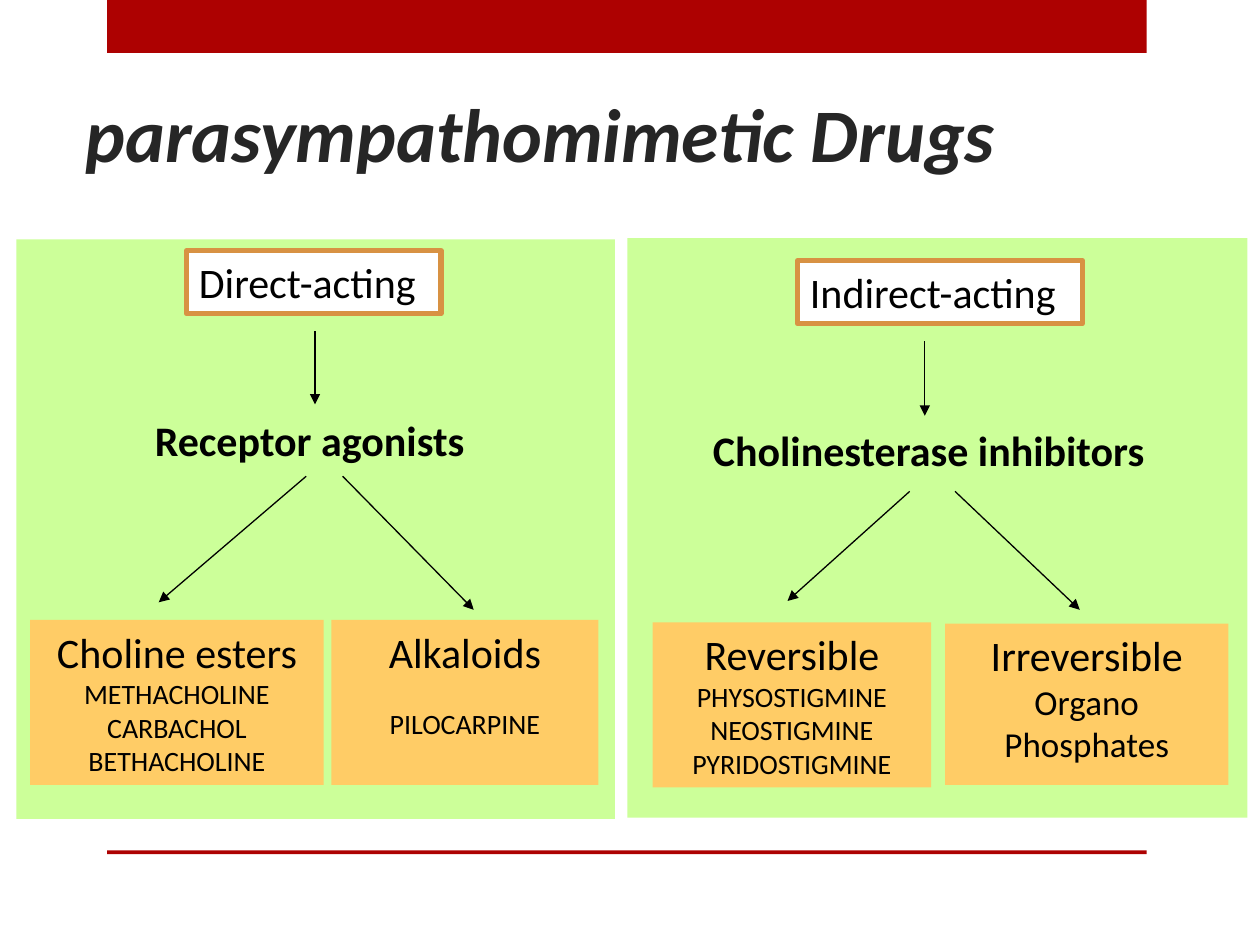
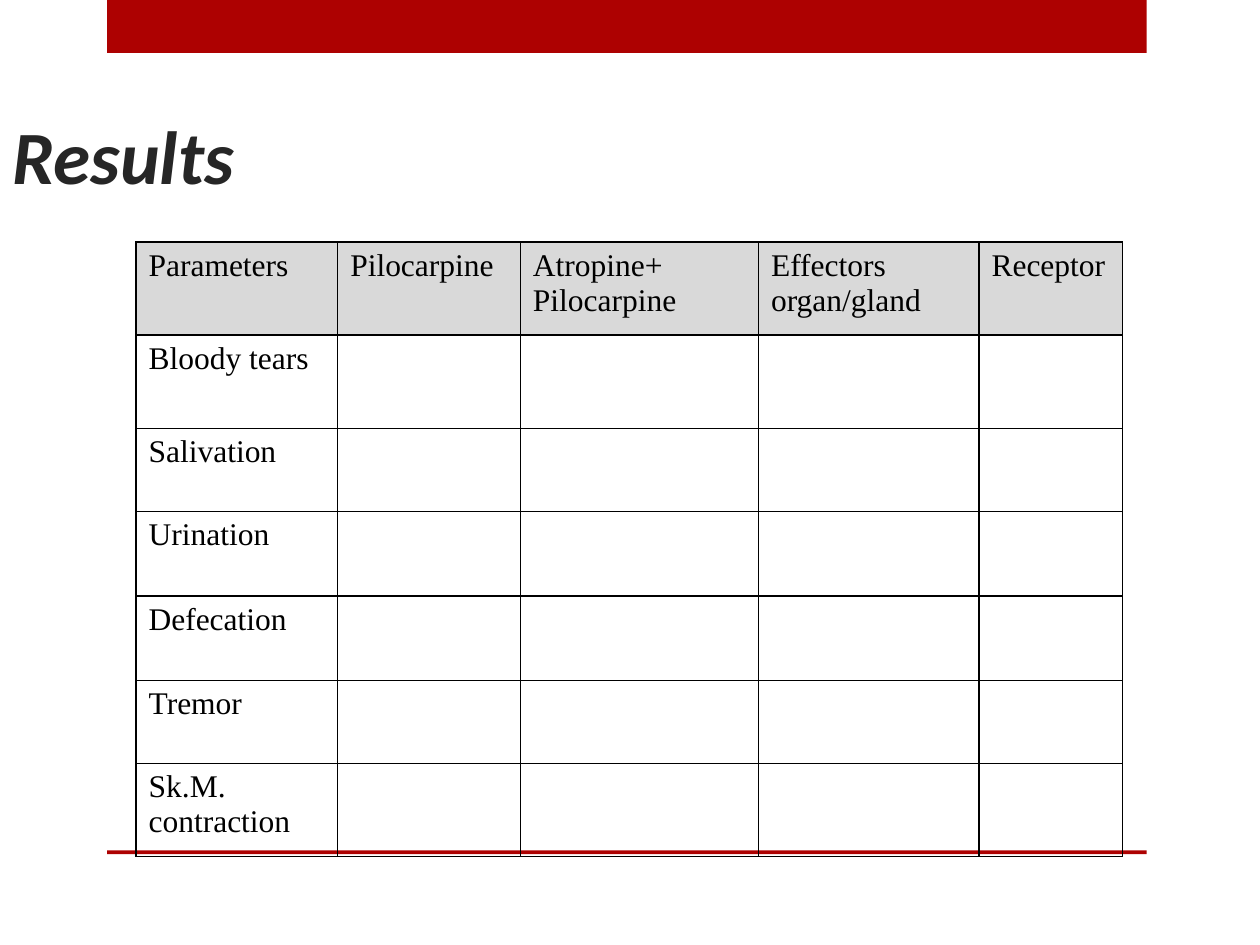
from dataclasses import dataclass
from typing import NamedTuple

from lxml.etree import SubElement
from pptx import Presentation
from pptx.dml.color import RGBColor
from pptx.enum.shapes import MSO_CONNECTOR, MSO_SHAPE
from pptx.enum.text import MSO_ANCHOR, PP_ALIGN
from pptx.oxml.ns import qn
from pptx.util import Inches, Pt

COLORS = {
    "band": "AD0101", "title": "262626", "ink": "000000", "paper": "FFFFFF",
    "panel": "CCFF99", "leaf": "FFCC66", "frame": "D89243", "header": "D9D9D9",
}
BODY_FONT, TABLE_FONT = "Calibri", "Times New Roman"
SLIDE_W, SLIDE_H = Inches(10), Inches(7.5)
GRID_COLUMNS, GRID_ROWS = 100, 75


class Area(NamedTuple):
    """A rectangle in grid columns and rows."""
    col: float
    row: float
    cols: float
    rows: float


class Arrow(NamedTuple):
    start_col: float
    start_row: float
    end_col: float
    end_row: float


class Line(NamedTuple):
    text: str
    size: float
    space_before: float = 0


@dataclass(frozen=True)
class DrugGroup:
    area: Area
    lines: tuple[Line, ...]


@dataclass(frozen=True)
class Branch:
    """One way of acting, its mechanism and the drug groups below it."""
    area: Area
    action: str
    action_area: Area
    mechanism: str
    mechanism_area: Area
    groups: tuple[DrugGroup, ...]
    arrows: tuple[Arrow, ...]


def drug_lines(heading: str, drugs: tuple[str, ...], size: float = 16,
               gap: float = 0) -> tuple[Line, ...]:
    first, *others = drugs
    return (Line(heading, 24), Line(first, size, gap),
            *(Line(drug, size) for drug in others))


BANDS = (Area(8.5, 0, 82.5, 4.2), Area(8.5, 67.5, 82.5, 0.3))

BRANCHES = (
    Branch(
        Area(49.8, 18.9, 49.2, 46),
        "Indirect-acting", Area(63.3, 20.7, 22.6, 5),
        "Cholinesterase inhibitors", Area(55.6, 33.2, 38.6, 5),
        (DrugGroup(Area(51.8, 49.4, 22.1, 13.1), drug_lines(
            "Reversible", ("PHYSOSTIGMINE", "NEOSTIGMINE", "PYRIDOSTIGMINE"))),
         DrugGroup(Area(75, 49.5, 22.5, 12.8), drug_lines(
             "Irreversible", ("Organo Phosphates",), size=20))),
        (Arrow(73.4, 27.1, 73.4, 33), Arrow(72.2, 39, 62.5, 47.7),
         Arrow(75.8, 39, 85.7, 48.4)),
    ),
    Branch(
        Area(1.3, 19, 47.5, 46),
        "Direct-acting", Area(14.8, 19.9, 20.2, 5),
        "Receptor agonists", Area(11.3, 32.4, 28.9, 5),
        (DrugGroup(Area(2.4, 49.2, 23.3, 13.1), drug_lines(
            "Choline esters", ("METHACHOLINE", "CARBACHOL", "BETHACHOLINE"))),
         DrugGroup(Area(26.3, 49.2, 21.2, 13.1), drug_lines(
             "Alkaloids", ("PILOCARPINE",), gap=17))),
        (Arrow(25, 26.3, 25, 32.1), Arrow(24.3, 37.8, 12.6, 47.8),
         Arrow(27.2, 37.8, 37.6, 48.4)),
    ),
)

RESULTS_AREA = Area(10.8, 19.2, 78.3, 48.8)
RESULTS_COLUMNS = (
    ("Parameters", 16), ("Pilocarpine", 14.5), ("Atropine+ Pilocarpine", 18.9),
    ("Effectors organ/gland", 17.5), ("Receptor", 11.4),
)
HEADER_ROWS = 7.4
RESULTS_PARAMETERS = (
    ("Bloody tears", 7.4), ("Salivation", 6.6), ("Urination", 6.7),
    ("Defecation", 6.7), ("Tremor", 6.6), ("Sk.M. contraction", 7.4),
)


def across(cols: float) -> int:
    return round(SLIDE_W * cols / GRID_COLUMNS)


def down(rows: float) -> int:
    return round(SLIDE_H * rows / GRID_ROWS)


def place(area: Area) -> tuple[int, int, int, int]:
    return across(area.col), down(area.row), across(area.cols), down(area.rows)


def color(name: str) -> RGBColor:
    return RGBColor.from_string(COLORS[name])


def style(font, size: float, ink: str = "ink", face: str = BODY_FONT,
          bold: bool = False, italic: bool = False) -> None:
    font.name, font.size, font.bold, font.italic = face, Pt(size), bold, italic
    font.color.rgb = color(ink)


def add_rectangle(slide, area: Area, fill: str, frame: str | None = None):
    rectangle = slide.shapes.add_shape(MSO_SHAPE.RECTANGLE, *place(area))
    rectangle.shadow.inherit = False
    rectangle.fill.solid()
    rectangle.fill.fore_color.rgb = color(fill)
    if frame:
        rectangle.line.color.rgb = color(frame)
        rectangle.line.width = Pt(3)
    else:
        rectangle.line.fill.background()
    return rectangle


def write_label(holder, text: str, bold: bool = False) -> None:
    """Put one unwrapped, left-aligned line in a shape."""
    frame = holder.text_frame
    frame.word_wrap = False
    frame.vertical_anchor = MSO_ANCHOR.TOP
    frame.text = text
    paragraph = frame.paragraphs[0]
    paragraph.alignment = PP_ALIGN.LEFT
    style(paragraph.runs[0].font, 24, bold=bold)


def add_group(slide, group: DrugGroup) -> None:
    frame = add_rectangle(slide, group.area, "leaf").text_frame
    frame.word_wrap = True
    frame.vertical_anchor = MSO_ANCHOR.TOP
    frame.text = "\n".join(line.text for line in group.lines)
    for paragraph, line in zip(frame.paragraphs, group.lines):
        paragraph.alignment = PP_ALIGN.CENTER
        if line.space_before:
            paragraph.space_before = Pt(line.space_before)
        style(paragraph.runs[0].font, line.size)


def add_arrow(slide, arrow: Arrow) -> None:
    connector = slide.shapes.add_connector(
        MSO_CONNECTOR.STRAIGHT, across(arrow.start_col), down(arrow.start_row),
        across(arrow.end_col), down(arrow.end_row))
    connector.line.color.rgb = color("ink")
    connector.line.width = Pt(0.75)
    SubElement(connector.line._get_or_add_ln(), qn("a:tailEnd"), type="triangle")
    SubElement(connector._element.spPr, qn("a:effectLst"))


def add_branch(slide, branch: Branch) -> None:
    add_rectangle(slide, branch.area, "panel")
    action = add_rectangle(slide, branch.action_area, "paper", "frame")
    write_label(action, branch.action)
    mechanism = slide.shapes.add_textbox(*place(branch.mechanism_area))
    write_label(mechanism, branch.mechanism, bold=True)
    for group in branch.groups:
        add_group(slide, group)
    for arrow in branch.arrows:
        add_arrow(slide, arrow)


def add_titled_slide(deck, title: str, area: Area, size: float):
    """Add a blank-layout slide with the shared bands and title style."""
    slide = deck.slides.add_slide(deck.slide_layouts[6])
    for band in BANDS:
        add_rectangle(slide, band, "band")
    frame = slide.shapes.add_textbox(*place(area)).text_frame
    frame.word_wrap = True
    frame.vertical_anchor = MSO_ANCHOR.BOTTOM
    frame.margin_bottom = 0
    frame.text = title
    style(frame.paragraphs[0].runs[0].font, size, "title", bold=True, italic=True)
    return slide


def border(cell) -> None:
    properties = cell._tc.get_or_add_tcPr()
    for side in ("lnL", "lnR", "lnT", "lnB"):
        edge = SubElement(properties, qn(f"a:{side}"), w=str(Pt(1)))
        fill = SubElement(edge, qn("a:solidFill"))
        SubElement(fill, qn("a:srgbClr"), val=COLORS["ink"])


def add_results_table(slide) -> None:
    headers = [header for header, _ in RESULTS_COLUMNS]
    blanks = [""] * (len(headers) - 1)
    contents = [headers] + [[name, *blanks] for name, _ in RESULTS_PARAMETERS]
    heights = [HEADER_ROWS] + [rows for _, rows in RESULTS_PARAMETERS]
    table = slide.shapes.add_table(
        len(contents), len(headers), *place(RESULTS_AREA)).table
    table.first_row = table.horz_banding = False
    for column, (_, cols) in zip(table.columns, RESULTS_COLUMNS):
        column.width = across(cols)
    for row_index, (row, rows, texts) in enumerate(
            zip(table.rows, heights, contents)):
        row.height = down(rows)
        for cell, text in zip(row.cells, texts):
            border(cell)
            if row_index == 0:
                cell.fill.solid()
                cell.fill.fore_color.rgb = color("header")
            else:
                cell.fill.background()
            if text:
                cell.text = text
                style(cell.text_frame.paragraphs[0].runs[0].font, 18,
                      face=TABLE_FONT)


def main() -> None:
    deck = Presentation()
    deck.slide_width, deck.slide_height = SLIDE_W, SLIDE_H

    drugs = add_titled_slide(deck, "parasympathomimetic Drugs",
                             Area(5.8, 3.3, 82.5, 10.8), 43.2)
    for branch in BRANCHES:
        add_branch(drugs, branch)

    results = add_titled_slide(deck, "Results", Area(0, 5, 95.8, 10.8), 43)
    add_results_table(results)

    deck.save("out.pptx")


if __name__ == "__main__":
    main()
